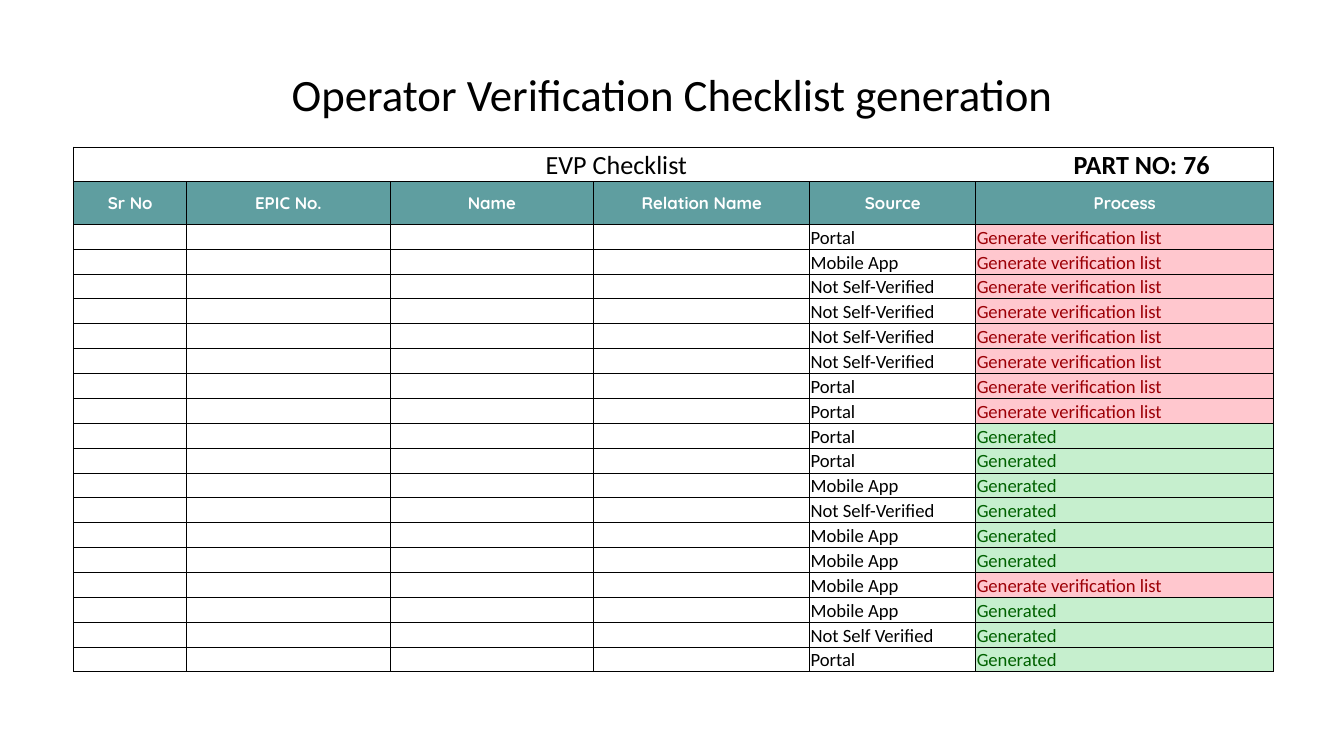
from dataclasses import dataclass

from lxml.etree import SubElement
from pptx import Presentation
from pptx.dml.color import RGBColor
from pptx.enum.text import MSO_ANCHOR, PP_ALIGN
from pptx.oxml.ns import qn
from pptx.util import Cm, Pt


@dataclass(frozen=True)
class Theme:
    body_font: str = "Calibri"
    header_font: str = "Quicksand"
    black: str = "000000"
    white: str = "FFFFFF"
    teal: str = "5F9EA0"
    dark_red: str = "9C0006"
    pink: str = "FFC7CE"
    dark_green: str = "006100"
    mint: str = "C6EFCE"
    title_size: int = 24
    caption_size: int = 14
    header_size: int = 9
    body_size: int = 10
    border: float = 0.5


@dataclass(frozen=True)
class Box:
    left: float
    top: float
    width: float
    height: float

    def lengths(self):
        return Cm(self.left), Cm(self.top), Cm(self.width), Cm(self.height)


THEME = Theme()
TITLE = "Operator Verification Checklist generation"
CAPTION = "EVP Checklist"
PART_NUMBER = "PART NO: 76"
CAPTION_TABS = (8.9, 18.88)
HEADERS = ("Sr No", "EPIC No.", "Name", "Relation Name", "Source", "Process")
COLUMN_WIDTHS = (2.14, 3.84, 3.85, 4.08, 3.14, 5.63)
CAPTION_HEIGHT = 0.65
HEADER_HEIGHT = 0.81

PENDING = ("Generate verification list", THEME.dark_red, THEME.pink)
DONE = ("Generated", THEME.dark_green, THEME.mint)
RECORDS = (
    ("Portal", PENDING),
    ("Mobile App", PENDING),
    *[("Not Self-Verified", PENDING)] * 4,
    *[("Portal", PENDING)] * 2,
    *[("Portal", DONE)] * 2,
    ("Mobile App", DONE),
    ("Not Self-Verified", DONE),
    *[("Mobile App", DONE)] * 2,
    ("Mobile App", PENDING),
    ("Mobile App", DONE),
    ("Not Self Verified", DONE),
    ("Portal", DONE),
)


def style_font(font, size, color=THEME.black, name=THEME.body_font, bold=False):
    font.name = name
    font.size = Pt(size)
    font.bold = bold
    font.color.rgb = RGBColor.from_string(color)


def add_borders(cell):
    properties = cell._tc.get_or_add_tcPr()
    for side in ("lnL", "lnR", "lnT", "lnB"):
        line = SubElement(properties, qn(f"a:{side}"), w=str(Pt(THEME.border)))
        fill = SubElement(line, qn("a:solidFill"))
        SubElement(fill, qn("a:srgbClr"), val=THEME.black)


def format_cell(cell, fill=THEME.white, anchor=MSO_ANCHOR.BOTTOM):
    add_borders(cell)
    cell.margin_left = cell.margin_right = cell.margin_top = Cm(0.02)
    cell.margin_bottom = Cm(0)
    cell.vertical_anchor = anchor
    cell.fill.solid()
    cell.fill.fore_color.rgb = RGBColor.from_string(fill)
    return cell.text_frame.paragraphs[0]


def fill_caption(row):
    for cell in row:
        format_cell(cell)
    row[0].merge(row[-1])
    para = row[0].text_frame.paragraphs[0]
    tabs = SubElement(para._p.get_or_add_pPr(), qn("a:tabLst"))
    for position in CAPTION_TABS:
        SubElement(tabs, qn("a:tab"), pos=str(Cm(position)), algn="l")
    for text, bold in ((CAPTION, False), (PART_NUMBER, True)):
        span = para.add_run()
        span.text = f"\t{text}"
        style_font(span.font, THEME.caption_size, bold=bold)


def fill_header(row):
    for cell, text in zip(row, HEADERS):
        para = format_cell(cell, THEME.teal, MSO_ANCHOR.MIDDLE)
        para.alignment = PP_ALIGN.CENTER
        para.add_run().text = text
        style_font(para.font, THEME.header_size, THEME.white, THEME.header_font, True)


def fill_record(row, source, process):
    *blanks, source_cell, process_cell = row
    for cell in blanks:
        para = format_cell(cell)
        SubElement(para._p, qn("a:endParaRPr"), sz=str(THEME.body_size * 100))
    status, color, fill = process
    for cell, text, ink, back in (
        (source_cell, source, THEME.black, THEME.white),
        (process_cell, status, color, fill),
    ):
        para = format_cell(cell, back)
        para.add_run().text = text
        style_font(para.font, THEME.body_size, ink)


def add_title(page, box):
    frame = page.shapes.add_textbox(*box.lengths()).text_frame
    frame.word_wrap = True
    frame.vertical_anchor = MSO_ANCHOR.MIDDLE
    para = frame.paragraphs[0]
    para.alignment = PP_ALIGN.CENTER
    para.add_run().text = TITLE
    style_font(para.font, THEME.title_size)


def add_checklist(page, box):
    shape = page.shapes.add_table(len(RECORDS) + 2, len(HEADERS), *box.lengths())
    table = shape.table
    table.first_row = table.horz_banding = False
    for column, width in zip(table.columns, COLUMN_WIDTHS):
        column.width = Cm(width)
    record_height = (box.height - CAPTION_HEIGHT - HEADER_HEIGHT) / len(RECORDS)
    heights = [CAPTION_HEIGHT, HEADER_HEIGHT] + [record_height] * len(RECORDS)
    for row, height in zip(table.rows, heights):
        row.height = Cm(height)
    caption, header, *records = [list(row.cells) for row in table.rows]
    fill_caption(caption)
    fill_header(header)
    for row, (source, process) in zip(records, RECORDS):
        fill_record(row, source, process)


def main():
    deck = Presentation()
    deck.slide_width = Cm(25.4)
    deck.slide_height = Cm(14.29)
    page = deck.slides.add_slide(deck.slide_layouts[6])
    add_title(page, Box(1.27, 0.58, 22.86, 2.38))
    add_checklist(page, Box(1.39, 2.78, sum(COLUMN_WIDTHS), 9.93))
    deck.save("out.pptx")


if __name__ == "__main__":
    main()
